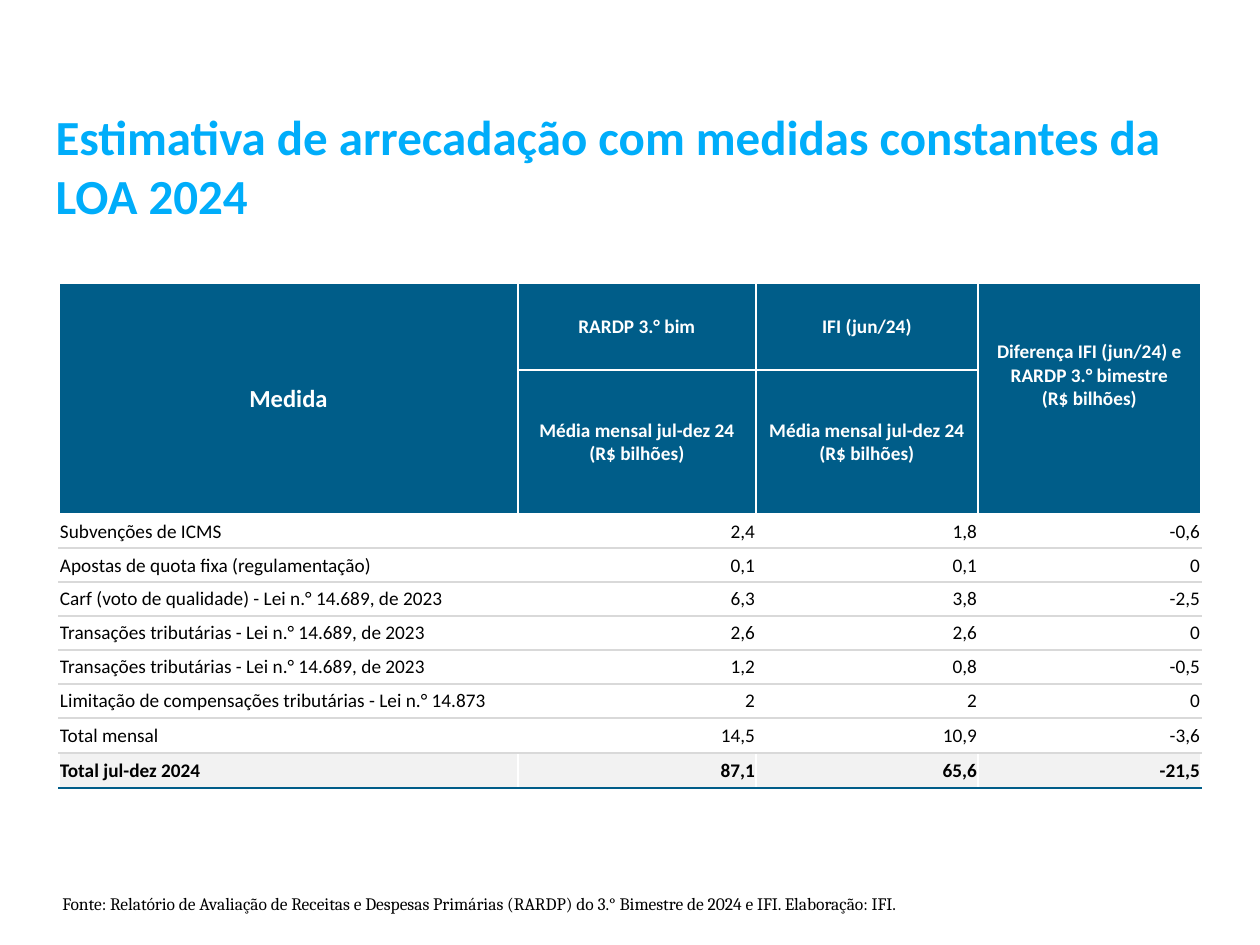
from dataclasses import dataclass

from lxml.etree import SubElement as Sub
from pptx import Presentation
from pptx.dml.color import RGBColor as Color
from pptx.enum.text import MSO_ANCHOR as Anchor, MSO_AUTO_SIZE as Fit, PP_ALIGN as Align
from pptx.oxml.ns import qn
from pptx.util import Pt

PX = 914400 / 126


def emu(px):
    return round(px * PX)


@dataclass(frozen=True)
class Theme:
    sans: str = "Calibri"
    serif: str = "Cambria"
    sky: str = "00ADFA"
    navy: str = "005D89"
    white: str = "FFFFFF"
    black: str = "000000"
    rule: str = "D9D9D9"
    pale: str = "F2F2F2"
    title: int = 28
    lead: int = 14
    cell: int = 11
    note: int = 10


class Page:
    def __init__(self, deck, theme):
        self.theme = theme
        self.slide = deck.slides.add_slide(deck.slide_layouts[5])

    def style(self, frame, size, color, bold=False, align=Align.LEFT, face=None):
        for par in frame.paragraphs:
            par.alignment = align
            font = par.font
            font.name = face or self.theme.sans
            font.size, font.bold = Pt(size), bold
            font.color.rgb = Color.from_string(color)

    def title(self, text, x, y, w, h):
        box = self.slide.shapes.title
        box.left, box.top, box.width, box.height = map(emu, (x, y, w, h))
        frame = box.text_frame
        frame.text = text
        frame.word_wrap, frame.auto_size = True, Fit.NONE
        frame.vertical_anchor = Anchor.TOP
        self.style(frame, self.theme.title, self.theme.sky, bold=True)

    def note(self, text, x, y, w, h):
        frame = self.slide.shapes.add_textbox(*map(emu, (x, y, w, h))).text_frame
        frame.text = text
        frame.word_wrap = True
        self.style(frame, self.theme.note, self.theme.black, face=self.theme.serif)

    def table(self, x, y, cols, rows):
        size = map(emu, (x, y, sum(cols), sum(rows)))
        grid = self.slide.shapes.add_table(len(rows), len(cols), *size).table
        grid.first_row = grid.horz_banding = False
        for col, w in zip(grid.columns, cols):
            col.width = emu(w)
        for row, h in zip(grid.rows, rows):
            row.height = emu(h)
        return grid

    def cell(self, cell, text, size, color, bold, align, fill=None, edges=None, base=0):
        # Borders come before the fill in the cell properties
        props = cell._tc.get_or_add_tcPr()
        for side in "LRTB":
            if side in (edges or {}):
                tone, width = edges[side]
                line = Sub(props, qn(f"a:ln{side}"), w=str(Pt(width)))
                Sub(Sub(line, qn("a:solidFill")), qn("a:srgbClr"), val=tone)
        if fill:
            cell.fill.solid()
            cell.fill.fore_color.rgb = Color.from_string(fill)
        else:
            cell.fill.background()
        cell.margin_left = cell.margin_right = cell.margin_top = emu(1)
        cell.margin_bottom = emu(base)
        cell.vertical_anchor = Anchor.MIDDLE
        cell.text_frame.text = text
        self.style(cell.text_frame, size, color, bold, align)


MEAN = "Média mensal jul-dez 24\v(R$ bilhões)"
HEAD = [
    ["Medida", "RARDP 3.° bim", "IFI (jun/24)",
     "Diferença IFI (jun/24) e RARDP 3.° bimestre\v(R$ bilhões)"],
    ["", MEAN, MEAN, ""],
]
BODY = [
    ["Subvenções de ICMS", "2,4", "1,8", "-0,6"],
    ["Apostas de quota fixa (regulamentação)", "0,1", "0,1", "0"],
    ["Carf (voto de qualidade) - Lei n.° 14.689, de 2023", "6,3", "3,8", "-2,5"],
    ["Transações tributárias - Lei n.° 14.689, de 2023", "2,6", "2,6", "0"],
    ["Transações tributárias - Lei n.° 14.689, de 2023", "1,2", "0,8", "-0,5"],
    ["Limitação de compensações tributárias - Lei n.° 14.873", "2", "2", "0"],
    ["Total mensal", "14,5", "10,9", "-3,6"],
    ["Total jul-dez 2024", "87,1", "65,6", "-21,5"],
]


def main():
    deck = Presentation()
    deck.slide_width, deck.slide_height = emu(1260), emu(945)
    look = Theme()
    page = Page(deck, look)

    page.title("Estimativa de arrecadação com medidas constantes da LOA 2024",
               43, 100, 1173, 131)

    # Table grid
    grid = page.table(59, 283, [459, 238, 222, 223], [87, 144] + [34] * 6 + [35] * 2)
    last = len(HEAD) + len(BODY) - 1

    # Header: white rules between the cells
    white = (look.white, 1)
    for r, row in enumerate(HEAD):
        for c, text in enumerate(row):
            edges = {}
            if c > 0:
                edges["L"] = white
            if c < 3:
                edges["R"] = white
            if c in (1, 2):
                edges["T" if r else "B"] = white
            page.cell(grid.cell(r, c), text, look.cell if c else look.lead, look.white,
                      True, Align.CENTER, look.navy, edges, base=47 if c == 3 else 0)
    for c in (0, 3):
        grid.cell(0, c).merge(grid.cell(1, c))

    # Measures and totals
    for r, row in enumerate(BODY, len(HEAD)):
        end = r == last
        edges = {"B": (look.navy, 1.5) if end else (look.rule, 1)}
        if r > len(HEAD):
            edges["T"] = (look.rule, 1)
        for c, text in enumerate(row):
            page.cell(grid.cell(r, c), text, look.cell, look.black, end,
                      Align.RIGHT if c else Align.LEFT, look.pale if end else None, edges)

    # Source line
    page.note("Fonte: Relatório de Avaliação de Receitas e Despesas Primárias (RARDP) "
              "do 3.° Bimestre de 2024 e IFI. Elaboração: IFI.", 50, 887, 1159, 34)

    deck.save("out.pptx")


if __name__ == "__main__":
    main()
